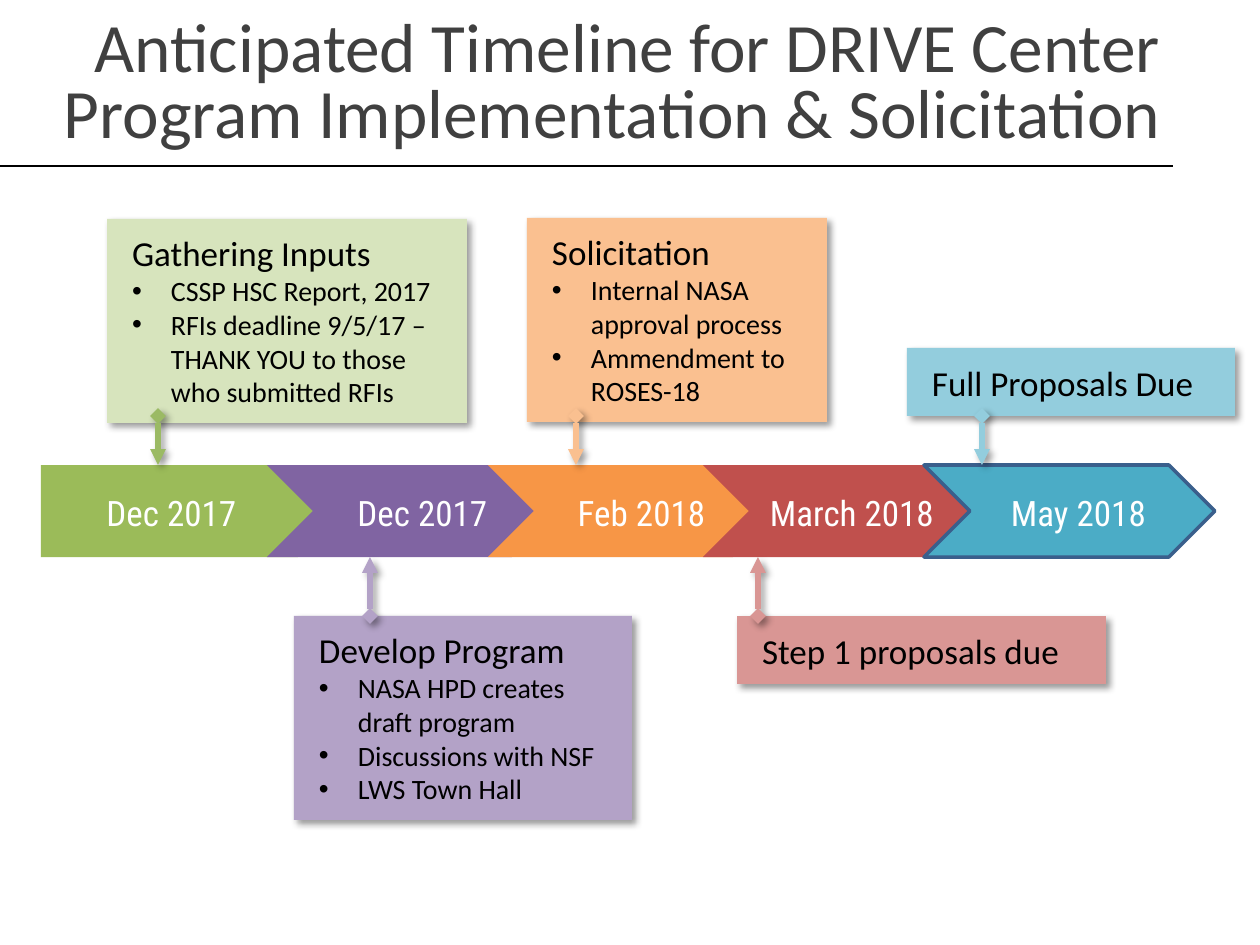
from collections import namedtuple

from lxml.etree import SubElement
from pptx import Presentation
from pptx.dml.color import RGBColor
from pptx.enum.shapes import MSO_CONNECTOR as Connector, MSO_SHAPE as Shape
from pptx.enum.text import MSO_ANCHOR as Anchor, MSO_AUTO_SIZE as AutoSize, PP_ALIGN as Align
from pptx.oxml.ns import qn
from pptx.util import Emu, Pt

PX = 914400 / 126  # EMU in one px

Milestone = namedtuple(
    "Milestone", "date color left width label_left label_width arrow_x arrow_color card")
Card = namedtuple("Card", "box color heading bullets")


class Theme:
    font, label_font = "Calibri", "Roboto Condensed"
    title_color, text_color, label_color = "404040", "000000", "FFFFFF"
    rule_color, outline_color, shadow_color = "000000", "3A5F8C", "000000"
    green, purple, orange, red, teal = "9BBB59", "8064A2", "F79646", "C0504D", "4BACC6"
    pale_green, pale_purple, pale_orange = "D7E4BD", "B3A2C7", "FAC090"
    pale_red, pale_teal, arrow_green = "D99694", "93CDDD", "9BBA64"
    title_size, heading_size, bullet_size, label_size = 39.6, 20, 16, 20


class TimelineSlide:
    def __init__(self, presentation, theme):
        self.theme = theme
        self.slide = presentation.slides.add_slide(presentation.slide_layouts[6])

    @staticmethod
    def emu(*lengths):
        return [Emu(round(length * PX)) for length in lengths]

    def style_text(self, paragraph, size, color, font):
        for run in paragraph.runs:
            run.font.size = Pt(size)
            run.font.name = font
            run.font.color.rgb = RGBColor.from_string(color)

    def add_shadow(self, shape):
        properties = shape._element.spPr
        effects = properties.find(qn("a:effectLst"))
        if effects is None:
            effects = SubElement(properties, qn("a:effectLst"))
        shadow = SubElement(effects, qn("a:outerShdw"), blurRad="50800", dist="38100",
                            dir="2700000", algn="tl", rotWithShape="0")
        color = SubElement(shadow, qn("a:srgbClr"), val=self.theme.shadow_color)
        SubElement(color, qn("a:alpha"), val="40000")

    def add_block(self, kind, box, color, outline=None):
        shape = self.slide.shapes.add_shape(kind, *self.emu(*box))
        shape.fill.solid()
        shape.fill.fore_color.rgb = RGBColor.from_string(color)
        if outline:
            shape.line.color.rgb = RGBColor.from_string(outline)
            shape.line.width = Pt(2)
        else:
            shape.line.fill.background()
        shape.shadow.inherit = False
        return shape

    def add_line(self, start, end, color, width):
        line = self.slide.shapes.add_connector(Connector.STRAIGHT, *self.emu(*start, *end))
        line.line.color.rgb = RGBColor.from_string(color)
        line.line.width = Pt(width)
        SubElement(line._element.spPr, qn("a:effectLst"))
        return line

    def add_arrow(self, start, end, color):
        arrow = self.add_line(start, end, color, 3)
        outline = arrow.line._get_or_add_ln()
        SubElement(outline, qn("a:headEnd"), type="diamond")
        SubElement(outline, qn("a:tailEnd"), type="triangle")
        self.add_shadow(arrow)

    def add_card(self, card):
        shape = self.add_block(Shape.RECTANGLE, card.box, card.color)
        self.add_shadow(shape)
        frame = shape.text_frame
        frame.word_wrap = True
        frame.auto_size = AutoSize.SHAPE_TO_FIT_TEXT
        frame.vertical_anchor = Anchor.TOP
        frame.margin_left, frame.margin_right = self.emu(25, 25)
        frame.margin_top, frame.margin_bottom = self.emu(13, 13)
        frame.text = "\n".join([card.heading, *card.bullets])
        indent = self.emu(39)[0]
        for index, paragraph in enumerate(frame.paragraphs):
            paragraph.alignment = Align.LEFT
            size = self.theme.heading_size
            if index:
                size = self.theme.bullet_size
                properties = paragraph._p.get_or_add_pPr()
                properties.set("marL", str(indent))
                properties.set("indent", str(-indent))
                SubElement(properties, qn("a:buFont"), typeface="Arial")
                SubElement(properties, qn("a:buChar"), char="•")
            self.style_text(paragraph, size, self.theme.text_color, self.theme.font)

    def add_text(self, text, box, size, color, font, align):
        frame = self.slide.shapes.add_textbox(*self.emu(*box)).text_frame
        frame.word_wrap = True
        frame.text = text
        paragraph = frame.paragraphs[0]
        paragraph.alignment = align
        self.style_text(paragraph, size, color, font)
        return frame

    def add_title(self, text, box):
        frame = self.add_text(text, box, self.theme.title_size, self.theme.title_color,
                              self.theme.font, Align.RIGHT)
        frame.vertical_anchor = Anchor.MIDDLE
        frame.margin_right = self.emu(74)[0]
        frame.paragraphs[0].line_spacing = 0.8

    def add_label(self, text, box):
        frame = self.add_text(text, box, self.theme.label_size, self.theme.label_color,
                              self.theme.label_font, Align.CENTER)
        frame.auto_size = AutoSize.SHAPE_TO_FIT_TEXT


BAND_TOP, BAND_HEIGHT = 465, 92
BAND_BOTTOM = BAND_TOP + BAND_HEIGHT
UPPER_ARROW, LOWER_CARD = 416, 616

MILESTONES = [
    Milestone("Dec 2017", Theme.green, 41, 303, 77, 189, 158, Theme.arrow_green,
              Card((107, 219, 360, 204), Theme.pale_green, "Gathering Inputs",
                   ["CSSP HSC Report, 2017",
                    "RFIs deadline 9/5/17 – THANK YOU to those who submitted RFIs"])),
    Milestone("Dec 2017", Theme.purple, 267, 291, 328, 189, 370, Theme.pale_purple,
              Card((294, LOWER_CARD, 338, 204), Theme.pale_purple, "Develop Program",
                   ["NASA HPD creates draft program", "Discussions with NSF",
                    "LWS Town Hall"])),
    Milestone("Feb 2018", Theme.orange, 488, 291, 547, 189, 576, Theme.pale_orange,
              Card((527, 218, 300, 204), Theme.pale_orange, "Solicitation",
                   ["Internal NASA approval process", "Ammendment to ROSES-18"])),
    Milestone("March 2018", Theme.red, 703, 291, 750, 204, 758, Theme.pale_red,
              Card((737, LOWER_CARD, 369, 68), Theme.pale_red, "Step 1 proposals due", [])),
    Milestone("May 2018", Theme.teal, 924, 291, 984, 189, 982, Theme.pale_teal,
              Card((907, 348, 328, 68), Theme.pale_teal, "Full Proposals Due", [])),
]


def main():
    presentation = Presentation()
    presentation.slide_width, presentation.slide_height = TimelineSlide.emu(1260, 945)
    timeline = TimelineSlide(presentation, Theme)

    # Title and rule
    timeline.add_title("Anticipated Timeline for DRIVE Center Program Implementation "
                       "& Solicitation", (28, 30, 1207, 111))
    timeline.add_line((0, 166), (1173, 166), Theme.rule_color, 0.75)

    # Band of dates
    for index, item in enumerate(MILESTONES):
        kind = Shape.CHEVRON if index else Shape.PENTAGON
        outline = Theme.outline_color if item is MILESTONES[-1] else None
        timeline.add_block(kind, (item.left, BAND_TOP, item.width, BAND_HEIGHT),
                           item.color, outline)

    # Cards, each tied to its date by an arrow
    for item in MILESTONES:
        timeline.add_card(item.card)
    for item in MILESTONES:
        below = item.card.box[1] == LOWER_CARD
        start, end = (LOWER_CARD, BAND_BOTTOM) if below else (UPPER_ARROW, BAND_TOP)
        timeline.add_arrow((item.arrow_x, start), (item.arrow_x, end), item.arrow_color)

    # Date labels
    for item in MILESTONES:
        timeline.add_label(item.date, (item.label_left, 485, item.label_width, 55))

    presentation.save("out.pptx")


if __name__ == "__main__":
    main()
